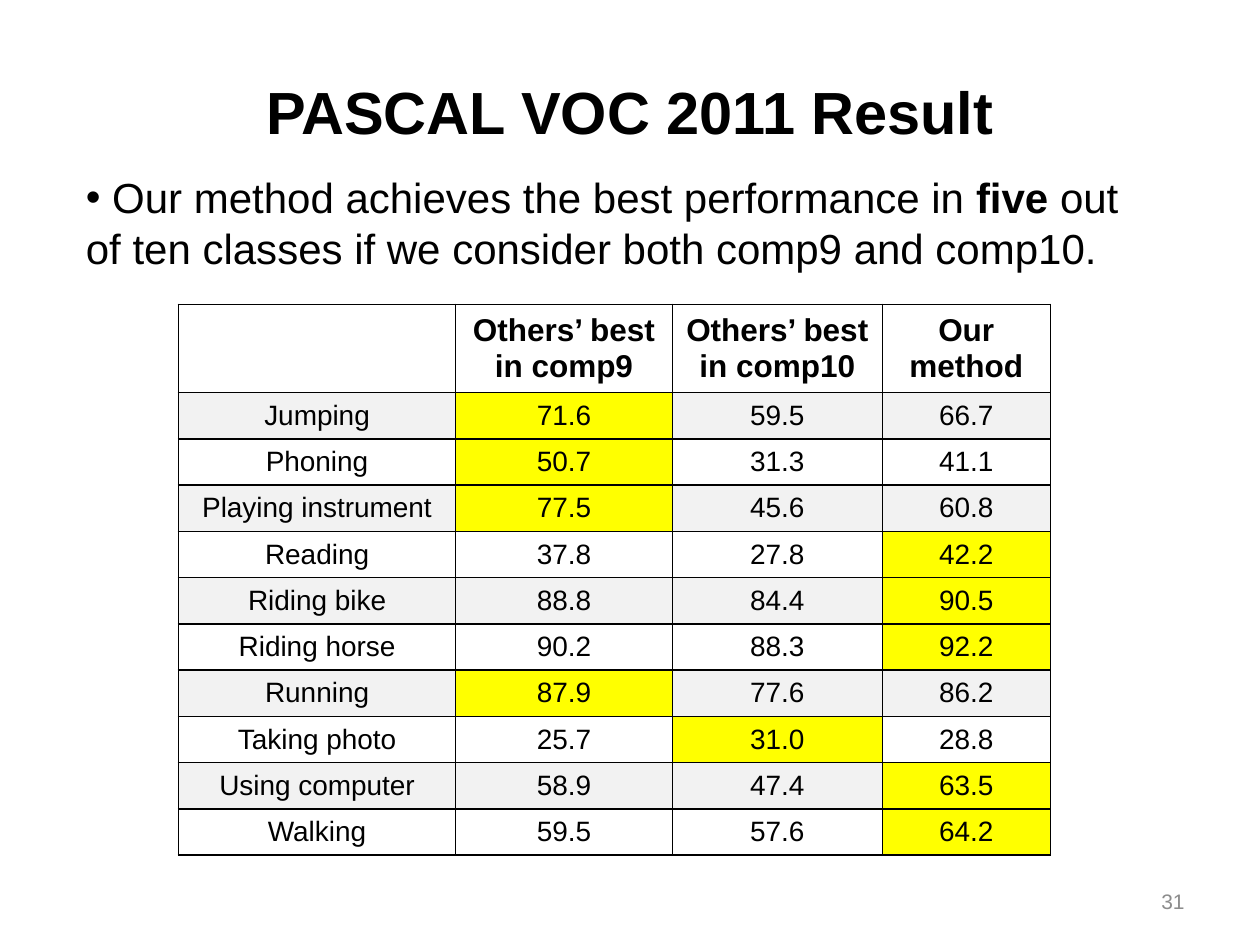
import pptx
import pptx.util
import pptx.dml.color
import pptx.enum.text
from lxml import etree

Pt = pptx.util.Pt
ALIGN = pptx.enum.text.PP_ALIGN
MIDDLE = pptx.enum.text.MSO_ANCHOR.MIDDLE
DRAWING = "http://schemas.openxmlformats.org/drawingml/2006/main"

TITLE = "PASCAL VOC 2011 Result"
SUMMARY = [
    (" Our method achieves the best performance in ", False),
    ("five", True),
    (" out of ten classes if we consider both comp9 and comp10.", False),
]
PAGE_NUMBER = "31"
HEADERS = ["", "Others’ best in comp9", "Others’ best in comp10", "Our method"]
SCORES = [
    ("Jumping", 71.6, 59.5, 66.7),
    ("Phoning", 50.7, 31.3, 41.1),
    ("Playing instrument", 77.5, 45.6, 60.8),
    ("Reading", 37.8, 27.8, 42.2),
    ("Riding bike", 88.8, 84.4, 90.5),
    ("Riding horse", 90.2, 88.3, 92.2),
    ("Running", 87.9, 77.6, 86.2),
    ("Taking photo", 25.7, 31.0, 28.8),
    ("Using computer", 58.9, 47.4, 63.5),
    ("Walking", 59.5, 57.6, 64.2),
]
COLUMN_WIDTHS = [158.4, 123.8, 120, 96]
HEADER_HEIGHT, ROW_HEIGHT = 49, 25.68
BLACK, GRAY, BAND, BEST = "000000", "8C8C8C", "F2F2F2", "FFFF00"


def color(value):
    return pptx.dml.color.RGBColor.from_string(value)


def format_run(run, size, bold=False, ink=BLACK):
    run.font.name = "Arial"
    run.font.size = Pt(size)
    run.font.bold = bold
    run.font.color.rgb = color(ink)


def add_text(slide, box, pieces, size, align, ink=BLACK):
    shape = slide.shapes.add_textbox(*map(Pt, box))
    shape.text_frame.word_wrap = True
    paragraph = shape.text_frame.paragraphs[0]
    paragraph.alignment = align
    for text, bold in pieces:
        run = paragraph.add_run()
        run.text = text
        format_run(run, size, bold, ink)
    return shape


def add_bullet(paragraph):
    properties = paragraph._p.get_or_add_pPr()
    properties.set("marL", "0")
    properties.set("indent", "0")
    font = etree.SubElement(properties, f"{{{DRAWING}}}buFont")
    font.set("typeface", "Arial")
    etree.SubElement(properties, f"{{{DRAWING}}}buChar").set("char", "•")


def add_borders(cell):
    properties = cell._tc.get_or_add_tcPr()
    for index, side in enumerate(("lnL", "lnR", "lnT", "lnB")):
        line = etree.Element(f"{{{DRAWING}}}{side}", w=str(Pt(1)))
        fill = etree.SubElement(line, f"{{{DRAWING}}}solidFill")
        etree.SubElement(fill, f"{{{DRAWING}}}srgbClr").set("val", BLACK)
        properties.insert(index, line)


def fill_cell(cell, text, size, bold, background):
    cell.text_frame.text = text
    cell.vertical_anchor = MIDDLE
    paragraph = cell.text_frame.paragraphs[0]
    paragraph.alignment = ALIGN.CENTER
    for run in paragraph.runs:
        format_run(run, size, bold)
    if background:
        cell.fill.solid()
        cell.fill.fore_color.rgb = color(background)
    else:
        cell.fill.background()
    add_borders(cell)


def add_score_table(slide):
    height = HEADER_HEIGHT + ROW_HEIGHT * len(SCORES)
    table = slide.shapes.add_table(
        len(SCORES) + 1, len(HEADERS),
        Pt(102), Pt(174), Pt(sum(COLUMN_WIDTHS)), Pt(height)).table
    table.first_row = False
    table.horz_banding = False
    for column, width in zip(table.columns, COLUMN_WIDTHS):
        column.width = Pt(width)
    for index, row in enumerate(table.rows):
        row.height = Pt(ROW_HEIGHT if index else HEADER_HEIGHT)
    for column, header in enumerate(HEADERS):
        fill_cell(table.cell(0, column), header, 18, True, None)
    for row, (activity, *values) in enumerate(SCORES, 1):
        band = BAND if row % 2 else None
        fill_cell(table.cell(row, 0), activity, 16, False, band)
        for column, value in enumerate(values, 1):
            background = BEST if value == max(values) else band
            fill_cell(table.cell(row, column), f"{value:.1f}", 16, False, background)


def main():
    presentation = pptx.Presentation()
    presentation.slide_width, presentation.slide_height = Pt(720), Pt(540)
    slide = presentation.slides.add_slide(presentation.slide_layouts[6])

    number = add_text(slide, (516, 500.5, 168, 28.75), [(PAGE_NUMBER, False)],
                      12, ALIGN.RIGHT, GRAY)
    number.text_frame.vertical_anchor = MIDDLE
    title = add_text(slide, (54, 36, 612, 48), [(TITLE, True)], 34, ALIGN.CENTER)
    title.text_frame.margin_top = Pt(7)
    add_score_table(slide)
    summary = add_text(slide, (42, 94.5, 630, 65.5), SUMMARY, 24, ALIGN.LEFT)
    add_bullet(summary.text_frame.paragraphs[0])

    presentation.save("out.pptx")


if __name__ == "__main__":
    main()
